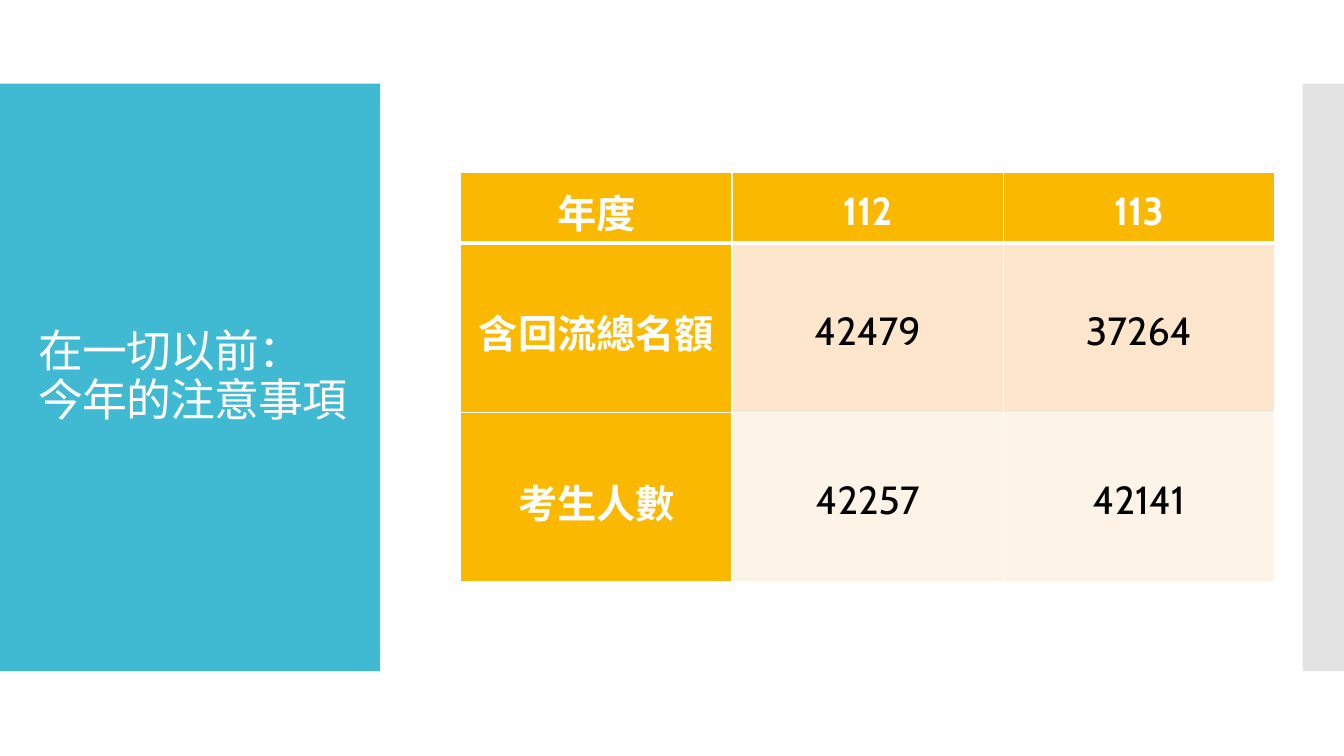
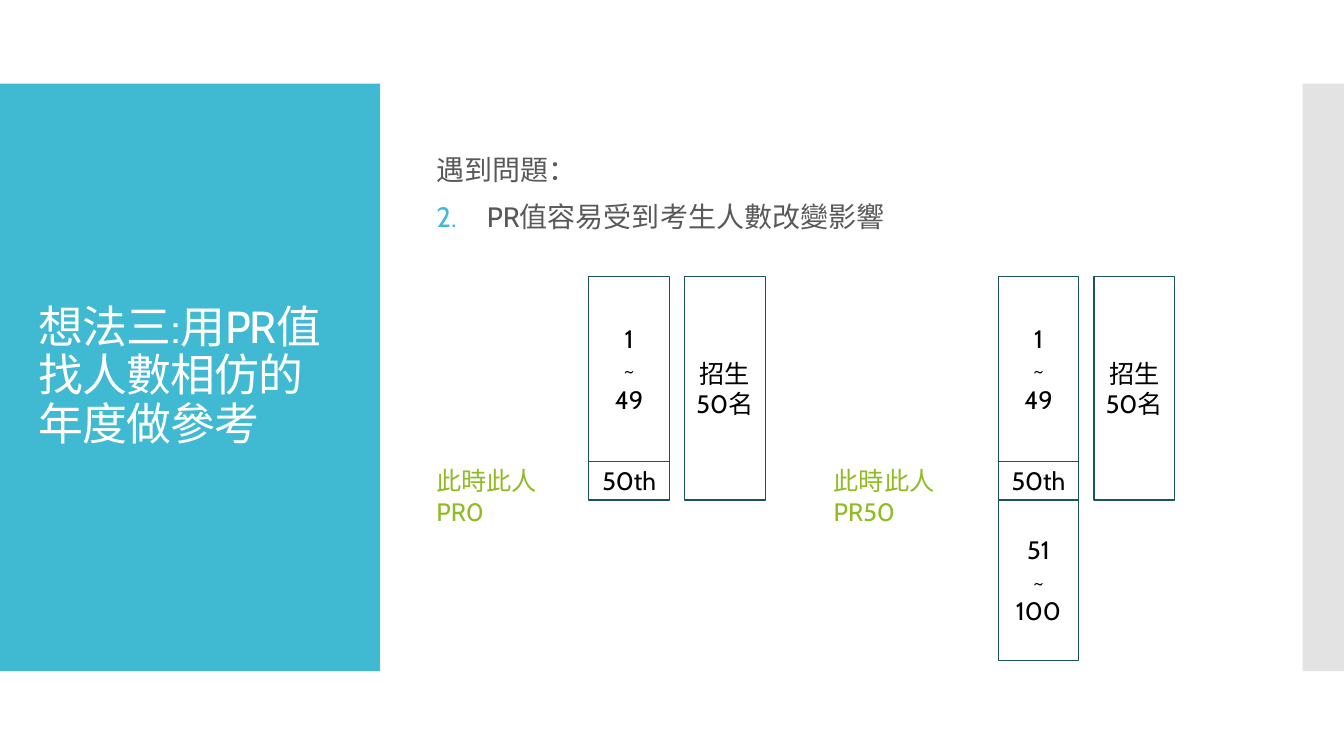
import pptx
import pptx.util
import pptx.dml.color
import pptx.enum.shapes
import pptx.enum.text
import pptx.oxml
import pptx.oxml.ns
import lxml.etree

Inches = pptx.util.Inches
Pt = pptx.util.Pt
ALIGN = pptx.enum.text.PP_ALIGN
ANCHOR = pptx.enum.text.MSO_ANCHOR
RECT = pptx.enum.shapes.MSO_SHAPE.RECTANGLE
qn = pptx.oxml.ns.qn

FONT = "Cabin"
COLORS = {
    "teal": "40BAD2", "grey": "C8C8C8", "white": "FFFFFF", "black": "000000",
    "body": "595959", "outline": "1C525C", "green": "90BB23",
    "gold": "FAB900", "peach": "FDE6CC", "cream": "FEF3E7",
}


def rgb(name):
    return pptx.dml.color.RGBColor.from_string(COLORS[name])


def write(frame, text, size=18, color="black", bold=False, align=ALIGN.LEFT,
          anchor=None, line=None, before=None, after=None, tracking=None):
    """Fill a text frame: newline starts a paragraph, vertical tab breaks a line."""
    frame.word_wrap = True
    if anchor is not None:
        frame.vertical_anchor = anchor
    frame.text = text
    for index, paragraph in enumerate(frame.paragraphs):
        paragraph.alignment = align
        if line:
            paragraph.line_spacing = line
        if before and index:
            paragraph.space_before = Pt(before)
        if after:
            paragraph.space_after = Pt(after)
        for run in paragraph.runs:
            run.font.name = FONT
            run.font.size = Pt(size)
            run.font.bold = bold
            run.font.color.rgb = rgb(color)
            if tracking:
                run.font._element.set("spc", str(int(tracking * 100)))


deck = pptx.Presentation()
deck.slide_width, deck.slide_height = Inches(13.33), Inches(7.5)

# Shared bands and titles
titles = ["在一切以前：\v今年的注意事項", "想法三:用PR值找人數相仿的年度做參考"]
slides = []
for title, title_width in zip(titles, [3.29, 3.22]):
    slide = deck.slides.add_slide(deck.slide_layouts[6])
    slides.append(slide)
    for left, width, color in [(0, 3.77, "teal"), (12.92, 0.42, "grey")]:
        band = slide.shapes.add_shape(RECT, Inches(left), Inches(0.83), Inches(width), Inches(5.83))
        band.shadow.inherit = False
        band.fill.solid()
        band.fill.fore_color.rgb = rgb(color)
        band.line.fill.background()
        if color == "grey":
            tint = band._element.spPr.find(".//" + qn("a:srgbClr"))
            lxml.etree.SubElement(tint, qn("a:alpha"), val="50000")
    heading = slide.shapes.add_textbox(Inches(0.28), Inches(1.23), Inches(title_width), Inches(5.03))
    write(heading.text_frame, title, size=32, color="white", anchor=ANCHOR.MIDDLE,
          line=0.9, tracking=-0.6)

quota_slide, rank_slide = slides

# Quota table
quota_rows = [
    ("年度", "112", "113"),
    ("含回流總名額", "42479", "37264"),
    ("考生人數", "42257", "42141"),
]
row_heights = [0.7, 1.68, 1.68]
row_fills = ["gold", "peach", "cream"]
quotas = quota_slide.shapes.add_table(3, 3, Inches(4.57), Inches(1.71), Inches(8.07), Inches(4.06)).table
for column in quotas.columns:
    column.width = Inches(2.69)
for r, values in enumerate(quota_rows):
    quotas.rows[r].height = Inches(row_heights[r])
    for c, value in enumerate(values):
        cell = quotas.cell(r, c)
        is_header = r == 0 or c == 0
        cell.margin_left = cell.margin_right = Inches(0.07)
        cell.margin_top = cell.margin_bottom = 0
        cell.vertical_anchor = ANCHOR.MIDDLE
        write(cell.text_frame, value, size=28, color="white" if is_header else "black",
              bold=is_header, align=ALIGN.CENTER, line=1.15, after=8)
        for side in ("L", "R", "T", "B"):
            under_header = (r, side) in [(0, "B"), (1, "T")]
            border = lxml.etree.SubElement(cell._tc.get_or_add_tcPr(), qn("a:ln" + side),
                                           w=str(Pt(3 if under_header else 1)))
            paint = lxml.etree.SubElement(border, qn("a:solidFill"))
            lxml.etree.SubElement(paint, qn("a:srgbClr"), val=COLORS["white"])
        cell.fill.solid()
        cell.fill.fore_color.rgb = rgb("gold" if is_header else row_fills[r])

# Problem statement, numbered from 2
problem = rank_slide.shapes.add_textbox(Inches(4.23), Inches(1.5), Inches(8), Inches(1))
write(problem.text_frame, "遇到問題：\nPR值容易受到考生人數改變影響",
      size=20, color="body", line=0.9, before=12)
numbering = problem.text_frame.paragraphs[1]._p.get_or_add_pPr()
numbering.set("marL", str(Inches(0.5)))
numbering.set("indent", str(-Inches(0.5)))
bullet_color = lxml.etree.SubElement(numbering, qn("a:buClr"))
lxml.etree.SubElement(bullet_color, qn("a:srgbClr"), val=COLORS["teal"])
lxml.etree.SubElement(numbering, qn("a:buFont"), typeface=FONT)
lxml.etree.SubElement(numbering, qn("a:buAutoNum"), type="arabicPeriod", startAt="2")

# Ranking columns: (left offset, top, height, text)
rank_boxes = [
    (0, 2.74, 1.84, "1\v~\v49"),
    (0.95, 2.74, 2.22, "招生\n50名"),
    (0, 4.58, 0.38, "50th"),
]
extra_box = (0, 4.96, 1.59, "51\v~\v100")
scenarios = [
    (5.84, rank_boxes, 4.23, 1.63, "此時此人PR0"),
    (9.9, rank_boxes + [extra_box], 8.17, 1.73, "此時此人PR50"),
]
for left, boxes, label_left, label_width, label in scenarios:
    for offset, top, height, text in boxes:
        box = rank_slide.shapes.add_shape(RECT, Inches(left + offset), Inches(top),
                                          Inches(0.8), Inches(height))
        box.shadow.inherit = False
        box.fill.background()
        box.line.color.rgb = rgb("outline")
        box.line.width = Pt(0.85)
        write(box.text_frame, text, align=ALIGN.CENTER, anchor=ANCHOR.MIDDLE)
    verdict = rank_slide.shapes.add_textbox(Inches(label_left), Inches(4.57),
                                            Inches(label_width), Inches(0.4))
    write(verdict.text_frame, label, color="green")

deck.save("out.pptx")
